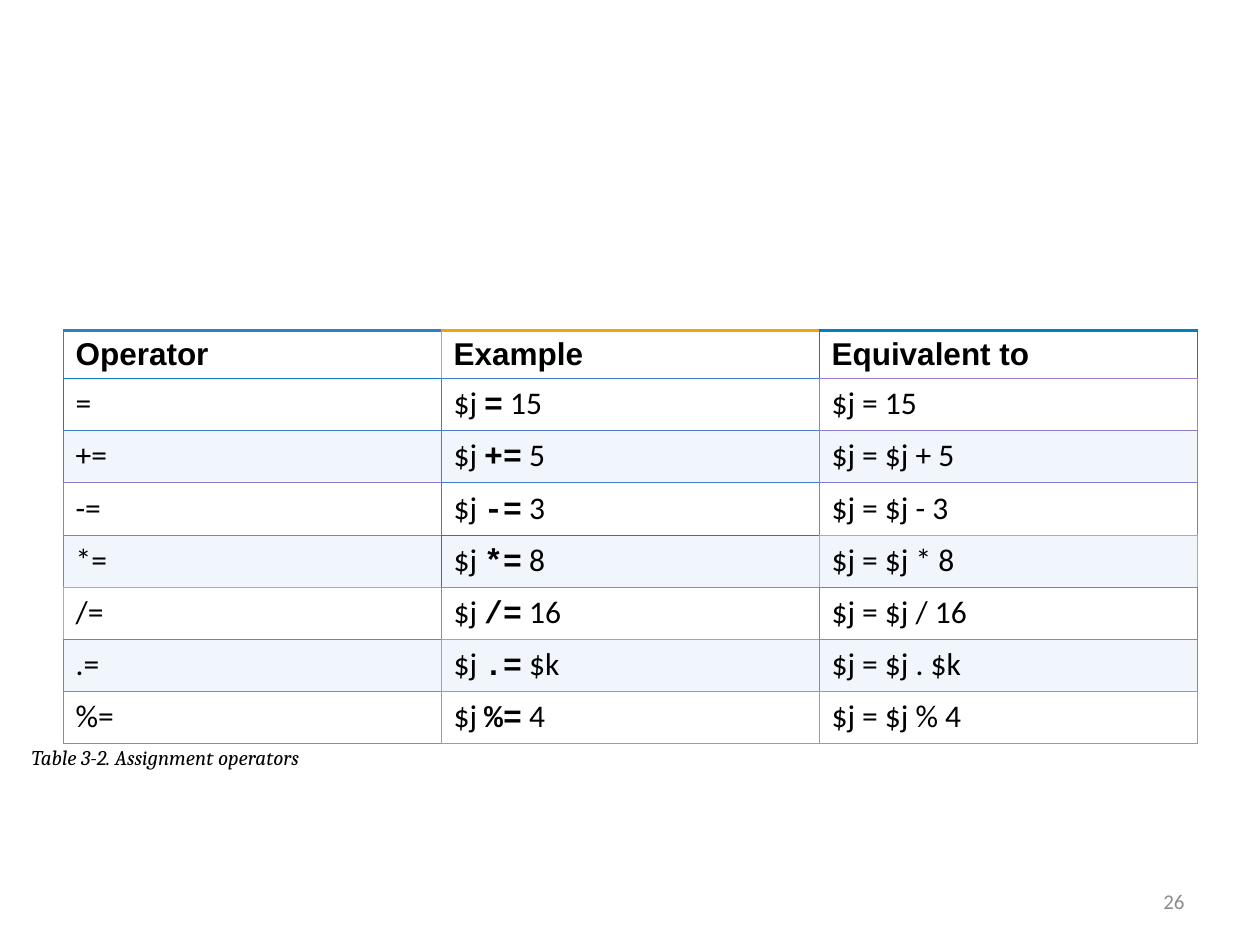
from typing import NamedTuple

import lxml.etree
import pptx
import pptx.dml.color
import pptx.enum.text
import pptx.oxml.ns
import pptx.util

Cm = pptx.util.Cm
Pt = pptx.util.Pt
RGBColor = pptx.dml.color.RGBColor
Anchor = pptx.enum.text.MSO_ANCHOR
Align = pptx.enum.text.PP_ALIGN
qn = pptx.oxml.ns.qn

BLACK = RGBColor(0x00, 0x00, 0x00)
GREY = RGBColor(0x8C, 0x8C, 0x8C)
BAND = RGBColor(0xF1, 0xF6, 0xFC)

HEADER_HEIGHT = Cm(0.97)
ROW_HEIGHT = Cm(1.05)
COLUMN_WIDTH = Cm(7.62)


class Face(NamedTuple):
    font: str
    size: float
    color: RGBColor = BLACK
    bold: bool = False
    italic: bool = False


class Assignment(NamedTuple):
    operator: str
    operand: str
    equivalent: str


class Label(NamedTuple):
    text: str
    left: float
    top: float
    width: float
    height: float
    face: Face
    align: Align
    anchor: Anchor
    margin: float
    wrap: bool


HEADING = Face("Arial", 18, bold=True)
BODY = Face("Calibri", 18)
CODE = Face("Courier New", 18, bold=True)

HEADINGS = ["Operator", "Example", "Equivalent to"]
ASSIGNMENTS = [
    Assignment("=", "15", "$j = 15"),
    Assignment("+=", "5", "$j = $j + 5"),
    Assignment("-=", "3", "$j = $j - 3"),
    Assignment("*=", "8", "$j = $j * 8"),
    Assignment("/=", "16", "$j = $j / 16"),
    Assignment(".=", "$k", "$j = $j . $k"),
    Assignment("%=", "4", "$j = $j % 4"),
]
ACCENTS = [
    [RGBColor.from_string(code) for code in row.split()]
    for row in (
        "307EC6 F0A405 007EC6",
        "107EC6 407EC6 A07EC6",
        "407EC6 507EC6 907EC6",
        "907EC6 407FC6 807FC6",
        "807FC6 107FC6 F0AA05",
        "F0AA05 A07DC6 B07F20",
        "B07F20 D0AA05 907FC6",
        "907FC6 8099F6 30EA1A",
    )
]
LABELS = [
    Label("26", 18.21, 17.65, 5.92, 1.02, Face("Calibri", 12, GREY),
          Align.RIGHT, Anchor.MIDDLE, 0.25, True),
    Label("Table 3-2. Assignment operators", 0.64, 15.01, 6.12, 1.27,
          Face("Cambria", 12, italic=True), Align.LEFT, Anchor.TOP, 0, False),
]


def style_run(run, face: Face) -> None:
    run.font.name = face.font
    run.font.size = Pt(face.size)
    run.font.bold = face.bold
    run.font.italic = face.italic
    run.font.color.rgb = face.color


def write_cell(cell, pieces: list[tuple[str, Face]]) -> None:
    paragraph = cell.text_frame.paragraphs[0]
    for text, face in pieces:
        run = paragraph.add_run()
        run.text = text
        style_run(run, face)


def draw_border(cell, side: str, color: RGBColor, width: float) -> None:
    properties = cell._tc.get_or_add_tcPr()
    line = lxml.etree.SubElement(properties, qn(f"a:{side}"), w=str(Pt(width)))
    fill = lxml.etree.SubElement(line, qn("a:solidFill"))
    lxml.etree.SubElement(fill, qn("a:srgbClr"), val=str(color))


def frame_cell(cell, row: int, column: int) -> None:
    last_row = len(ACCENTS) - 1
    own = ACCENTS[row][column]
    right = ACCENTS[row][min(column + 1, len(HEADINGS) - 1)]
    below = ACCENTS[min(row + 1, last_row)][column]
    draw_border(cell, "lnL", own, 0.5)
    draw_border(cell, "lnR", right, 0.5)
    draw_border(cell, "lnT", own, 1.5 if row == 0 else 0.5)
    draw_border(cell, "lnB", below, 0.75 if row == last_row else 0.5)


def add_operators(slide) -> None:
    contents = [[[(heading, HEADING)] for heading in HEADINGS]]
    for item in ASSIGNMENTS:
        example = [("$j ", BODY), (item.operator, CODE), (f" {item.operand}", BODY)]
        contents.append([[(item.operator, BODY)], example, [(item.equivalent, BODY)]])

    operators = slide.shapes.add_table(
        len(contents), len(HEADINGS), Cm(1.27), Cm(6.66),
        COLUMN_WIDTH * len(HEADINGS), HEADER_HEIGHT + ROW_HEIGHT * len(ASSIGNMENTS),
    ).table
    operators.first_row = False
    operators.horz_banding = False
    for column in operators.columns:
        column.width = COLUMN_WIDTH
    for row, cells in enumerate(contents):
        operators.rows[row].height = ROW_HEIGHT if row else HEADER_HEIGHT
        for column, pieces in enumerate(cells):
            cell = operators.cell(row, column)
            cell.vertical_anchor = Anchor.TOP if row else Anchor.BOTTOM
            write_cell(cell, pieces)
            frame_cell(cell, row, column)
            if row and row % 2 == 0:
                cell.fill.solid()
                cell.fill.fore_color.rgb = BAND
            else:
                cell.fill.background()


def add_label(slide, label: Label) -> None:
    frame = slide.shapes.add_textbox(
        Cm(label.left), Cm(label.top), Cm(label.width), Cm(label.height)
    ).text_frame
    frame.word_wrap = label.wrap
    frame.vertical_anchor = label.anchor
    frame.margin_left = frame.margin_right = Cm(label.margin)
    frame.margin_top = frame.margin_bottom = Cm(label.margin / 2)
    frame.text = label.text
    frame.paragraphs[0].alignment = label.align
    style_run(frame.paragraphs[0].runs[0], label.face)


def main() -> None:
    deck = pptx.Presentation()
    deck.slide_width = Cm(25.4)
    deck.slide_height = Cm(19.05)
    slide = deck.slides.add_slide(deck.slide_layouts[6])
    add_operators(slide)
    for label in LABELS:
        add_label(slide, label)
    deck.save("out.pptx")


if __name__ == "__main__":
    main()
